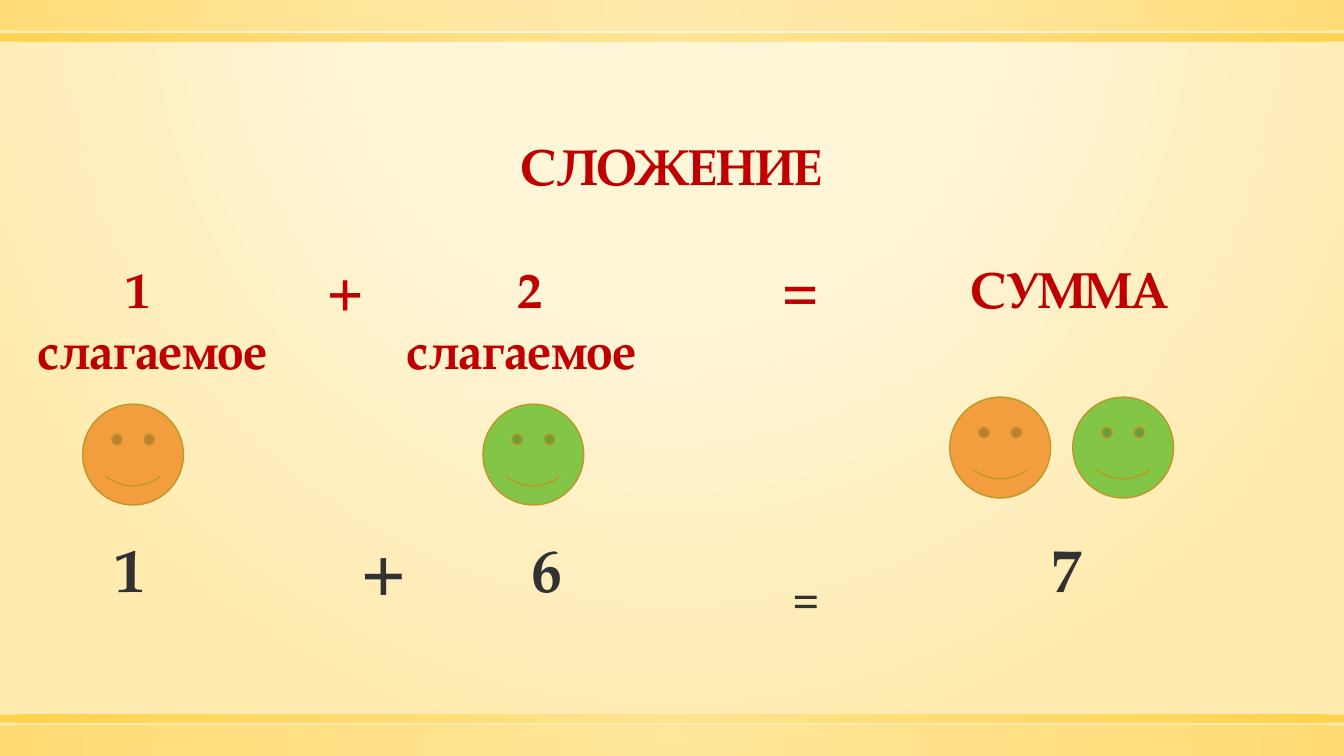
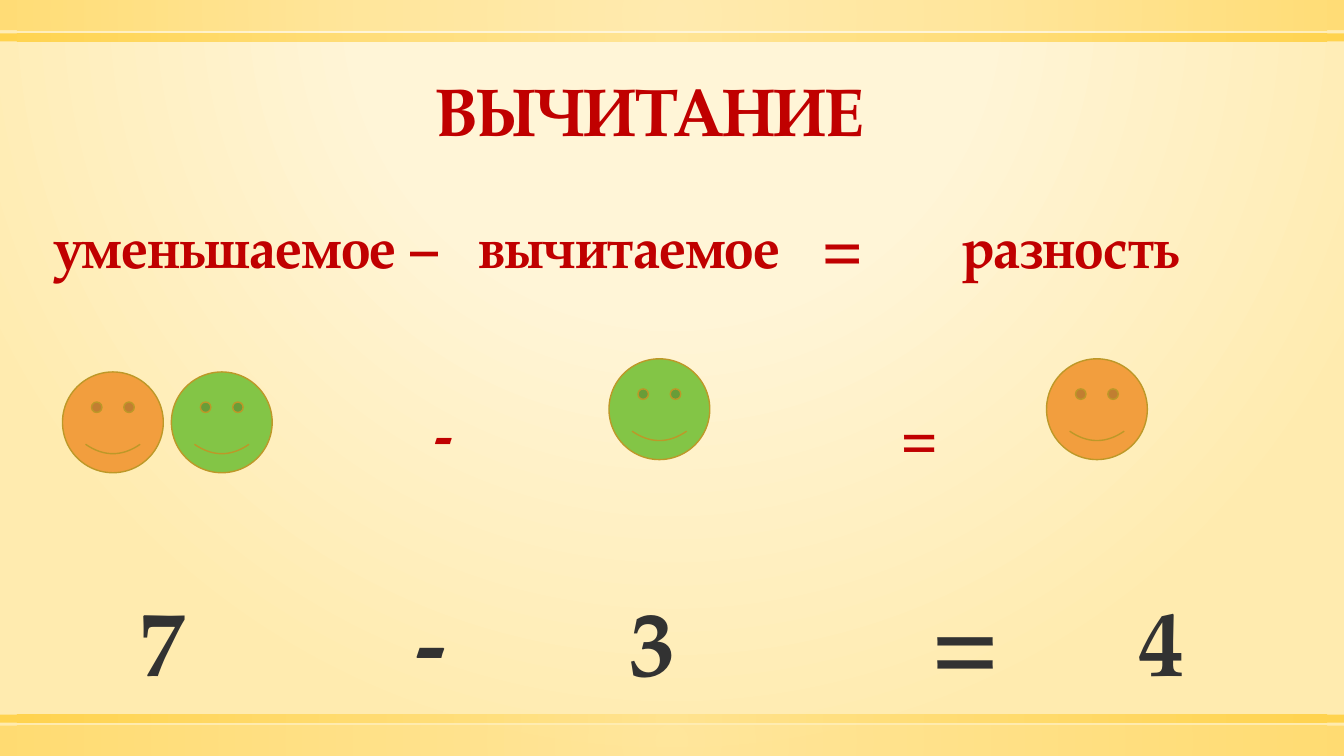
"""Two lesson slides on the names of the parts of addition and subtraction."""
from lxml import etree
from pptx import Presentation
from pptx.dml.color import RGBColor
from pptx.enum.shapes import MSO_SHAPE
from pptx.enum.text import MSO_ANCHOR, PP_ALIGN
from pptx.oxml.ns import qn
from pptx.util import Inches, Pt

RECTANGLE, SMILEY = MSO_SHAPE.RECTANGLE, MSO_SHAPE.SMILEY_FACE
CENTER, TOP = PP_ALIGN.CENTER, MSO_ANCHOR.TOP

SLIDE_WIDTH, SLIDE_HEIGHT = 13.33, 7.5
FONT = "TeX Gyre Pagella"
FONT_ASCENT = 1.125
RED, DARK = "C00000", "323232"
ORANGE, GREEN, FACE_LINE = "F29E3E", "83C546", "BD9828"
FACE_SIZE = 1
WORD_WIDTH = 5

BACKGROUND_STOPS = [(0, "FFF5D7", 59), (40, "FFF5D7", 66), (100, "FFEBAF", 100)]
BACKGROUND_FOCUS = (50, -80, 50, 180)
BAND_FOCUS = (50, 50, 50, 50)
BANDS = [(0, 0.3, 50), (0.33, 0.08, 80)]

SLIDES = [
    {
        "rows": [
            {"baseline": 1.9, "size": 36, "color": RED, "words": [("СЛОЖЕНИЕ", 6.66)]},
            {"baseline": 3.12, "size": 36, "color": RED,
             "words": [("1", 1.37), ("+", 3.43), ("2", 5.26), ("=", 7.94), ("СУММА", 10.6)]},
            {"baseline": 3.73, "size": 36, "color": RED,
             "words": [("слагаемое", 1.51), ("слагаемое", 5.17)]},
            {"baseline": 5.95, "size": 44, "color": DARK,
             "words": [("1", 1.29), ("+", 3.81), ("6", 5.42), ("7", 10.58)]},
            {"baseline": 6.11, "size": 26, "color": DARK, "words": [("=", 8)]},
        ],
        "faces": [(0.82, 4.01, ORANGE), (4.79, 4.01, GREEN),
                  (9.42, 3.94, ORANGE), (10.64, 3.94, GREEN)],
    },
    {
        "rows": [
            {"baseline": 1.44, "size": 48, "color": RED, "words": [("ВЫЧИТАНИЕ", 6.44)]},
            {"baseline": 2.73, "size": 40, "color": RED,
             "words": [("уменьшаемое", 2.23), ("–", 4.21), ("вычитаемое", 6.24),
                       ("=", 8.36), ("разность", 10.62)]},
            {"baseline": 4.59, "size": 40, "color": RED, "words": [("-", 4.4)]},
            {"baseline": 4.59, "size": 36, "color": RED, "words": [("=", 9.12)]},
            {"baseline": 6.83, "size": 66, "color": DARK,
             "words": [("7", 1.61), ("-", 4.27), ("3", 6.47), ("=", 9.58), ("4", 11.52)]},
        ],
        "faces": [(0.62, 3.69, ORANGE), (1.7, 3.69, GREEN),
                  (6.04, 3.56, GREEN), (10.38, 3.56, ORANGE)],
    },
]


def rgb(color):
    """Turn a hex string into a colour."""
    return RGBColor.from_string(color)


def set_radial_fill(parent, stops, focus):
    """Replace the empty fill of an element with a circular gradient."""
    gradient = etree.Element(qn("a:gradFill"), rotWithShape="1")
    stop_list = etree.SubElement(gradient, qn("a:gsLst"))
    for position, color, opacity in stops:
        stop = etree.SubElement(stop_list, qn("a:gs"), pos=str(position * 1000))
        tint = etree.SubElement(stop, qn("a:srgbClr"), val=color)
        if opacity < 100:
            etree.SubElement(tint, qn("a:alpha"), val=str(opacity * 1000))
    circle = etree.SubElement(gradient, qn("a:path"), path="circle")
    sides = {side: str(share * 1000) for side, share in zip("ltrb", focus)}
    etree.SubElement(circle, qn("a:fillToRect"), **sides)
    parent.replace(parent.find(qn("a:noFill")), gradient)


def add_plain_shape(slide, kind, left, top, width, height):
    """Add a shape with no shadow, fill or line."""
    shape = slide.shapes.add_shape(
        kind, Inches(left), Inches(top), Inches(width), Inches(height))
    shape.shadow.inherit = False
    shape.fill.background()
    shape.line.fill.background()
    return shape


def add_bands(slide):
    """Draw the mirrored bands along the top and bottom edges."""
    for offset, height, opacity in BANDS:
        stops = [(0, "FFE186", opacity), (100, "FFCD36", opacity)]
        for top in (SLIDE_HEIGHT - offset - height, offset):
            band = add_plain_shape(slide, RECTANGLE, 0, top, SLIDE_WIDTH, height)
            set_radial_fill(band.element.spPr, stops, BAND_FOCUS)


def add_word(slide, text, center, *, baseline, size, color):
    """Write a bold word centred on a point of its baseline."""
    top = baseline - FONT_ASCENT * size / 72
    box = slide.shapes.add_textbox(Inches(center - WORD_WIDTH / 2), Inches(top),
                                   Inches(WORD_WIDTH), Inches(1.4 * size / 72))
    frame = box.text_frame
    frame.word_wrap = True
    frame.vertical_anchor = TOP
    frame.margin_left = frame.margin_right = frame.margin_top = frame.margin_bottom = 0
    paragraph = frame.paragraphs[0]
    paragraph.alignment = CENTER
    run = paragraph.add_run()
    run.text = text
    run.font.name, run.font.size, run.font.bold = FONT, Pt(size), True
    run.font.color.rgb = rgb(color)


def add_face(slide, left, top, color):
    """Draw a smiling counter."""
    face = add_plain_shape(slide, SMILEY, left, top, FACE_SIZE, FACE_SIZE)
    face.fill.solid()
    face.fill.fore_color.rgb = rgb(color)
    face.line.color.rgb = rgb(FACE_LINE)
    face.line.width = Pt(1)


def main():
    """Build and save the slides."""
    prs = Presentation()
    prs.slide_width, prs.slide_height = Inches(SLIDE_WIDTH), Inches(SLIDE_HEIGHT)
    master = prs.slide_master
    master.background.fill.background()
    set_radial_fill(master.element.cSld.bg.bgPr, BACKGROUND_STOPS, BACKGROUND_FOCUS)
    for content in SLIDES:
        slide = prs.slides.add_slide(prs.slide_layouts[6])
        add_bands(slide)
        for row in content["rows"]:
            for text, center in row["words"]:
                add_word(slide, text, center, baseline=row["baseline"],
                         size=row["size"], color=row["color"])
        for left, top, color in content["faces"]:
            add_face(slide, left, top, color)
    prs.save("out.pptx")


if __name__ == "__main__":
    main()
